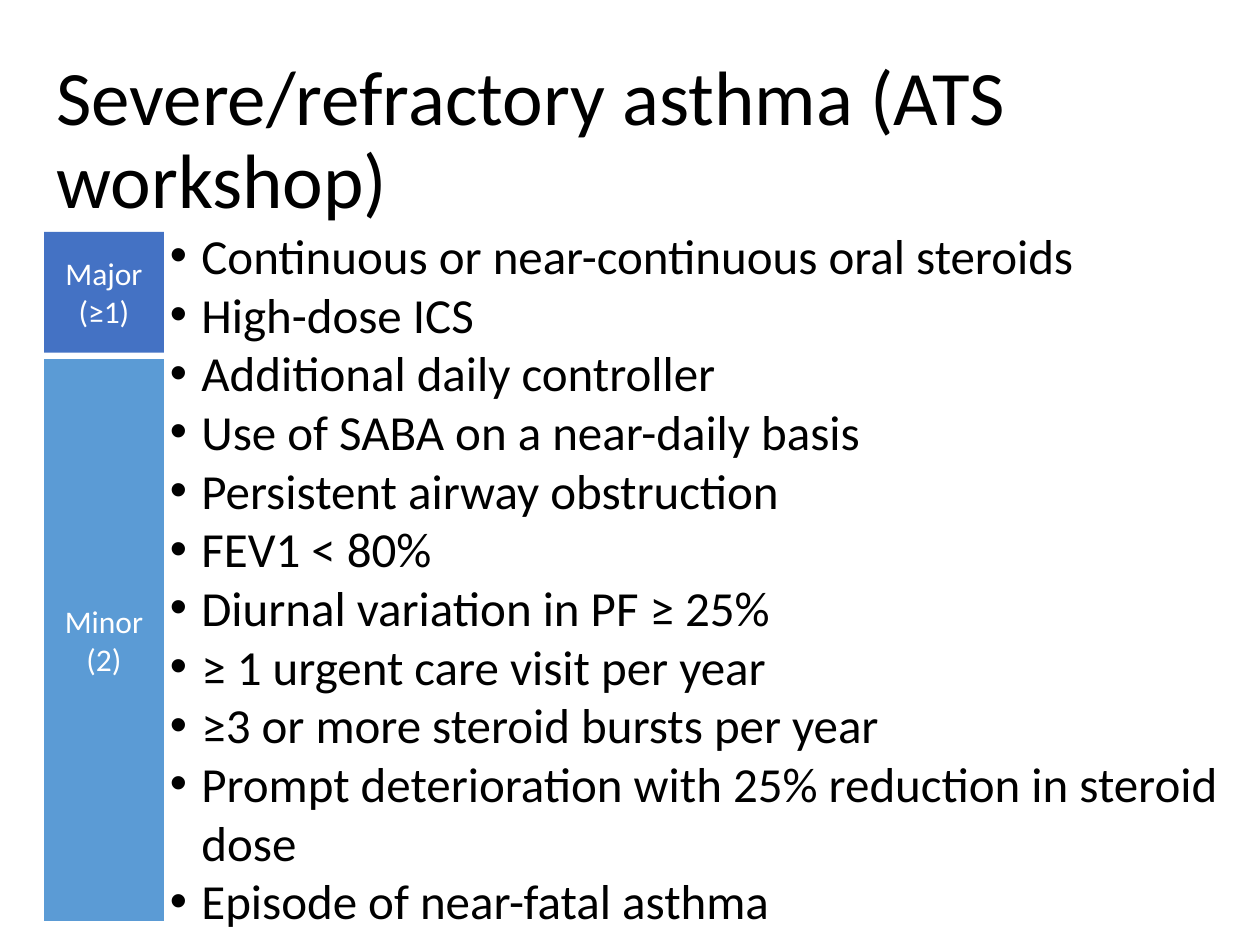
from lxml.etree import SubElement
from pptx import Presentation
from pptx.dml.color import RGBColor
from pptx.enum.shapes import MSO_SHAPE as Shape
from pptx.enum.text import MSO_ANCHOR as Anchor, MSO_AUTO_SIZE as AutoSize, PP_ALIGN as Align
from pptx.oxml.ns import qn
from pptx.util import Inches, Pt

FONT = "Calibri"
BLACK, WHITE = "000000", "FFFFFF"

TITLE = "Severe/refractory asthma (ATS workshop)"
CRITERIA = [
    "Continuous or near-continuous oral steroids",
    "High-dose ICS",
    "Additional daily controller",
    "Use of SABA on a near-daily basis",
    "Persistent airway obstruction",
    "FEV1 < 80%",
    "Diurnal variation in PF ≥ 25%",
    "≥ 1 urgent care visit per year",
    "≥3 or more steroid bursts per year",
    "Prompt deterioration with 25% reduction in steroid dose",
    "Episode of near-fatal asthma",
]
# label lines, height, fill
GROUPS = [
    (["Major", "(≥1)"], 0.96, "4472C4"),
    (["Minor", "(2)"], 4.46, "5B9BD5"),
]
LEFT, GROUP_TOP, GROUP_WIDTH, GROUP_GAP = 0.35, 1.84, 0.95, 0.05


def rgb(color):
    return RGBColor.from_string(color)


def write(frame, lines, size, color, align=Align.LEFT, anchor=Anchor.TOP):
    frame.word_wrap = True
    frame.vertical_anchor = anchor
    for i, line in enumerate(lines):
        paragraph = frame.paragraphs[0] if i == 0 else frame.add_paragraph()
        paragraph.alignment = align
        run = paragraph.add_run()
        run.text = line
        run.font.name = FONT
        run.font.size = Pt(size)
        run.font.color.rgb = rgb(color)


def add_text(slide, left, top, width, height):
    return slide.shapes.add_textbox(*map(Inches, (left, top, width, height))).text_frame


def add_bullet(paragraph, indent):
    props = paragraph._p.get_or_add_pPr()
    props.set("marL", str(Inches(indent)))
    props.set("indent", str(-Inches(indent)))
    SubElement(props, qn("a:buFont")).set("typeface", "Arial")
    SubElement(props, qn("a:buChar")).set("char", "•")


prs = Presentation()
prs.slide_width, prs.slide_height = Inches(10), Inches(7.5)
slide = prs.slides.add_slide(prs.slide_layouts[6])

title = add_text(slide, LEFT, 0.4, 8.97, 1.45)
write(title, [TITLE], 44, BLACK, anchor=Anchor.MIDDLE)
title.paragraphs[0].line_spacing = 0.9

criteria = add_text(slide, 1.25, 1.74, 9.35, 5.76)
write(criteria, CRITERIA, 28, BLACK)
criteria.auto_size = AutoSize.TEXT_TO_FIT_SHAPE
for criterion in criteria.paragraphs:
    add_bullet(criterion, 0.25)

top = GROUP_TOP
for label, height, fill in GROUPS:
    group = slide.shapes.add_shape(
        Shape.RECTANGLE, *map(Inches, (LEFT, top, GROUP_WIDTH, height)))
    group.shadow.inherit = False
    group.fill.solid()
    group.fill.fore_color.rgb = rgb(fill)
    group.line.fill.background()
    write(group.text_frame, label, 18, WHITE, Align.CENTER, Anchor.MIDDLE)
    top += height + GROUP_GAP

prs.save("out.pptx")
